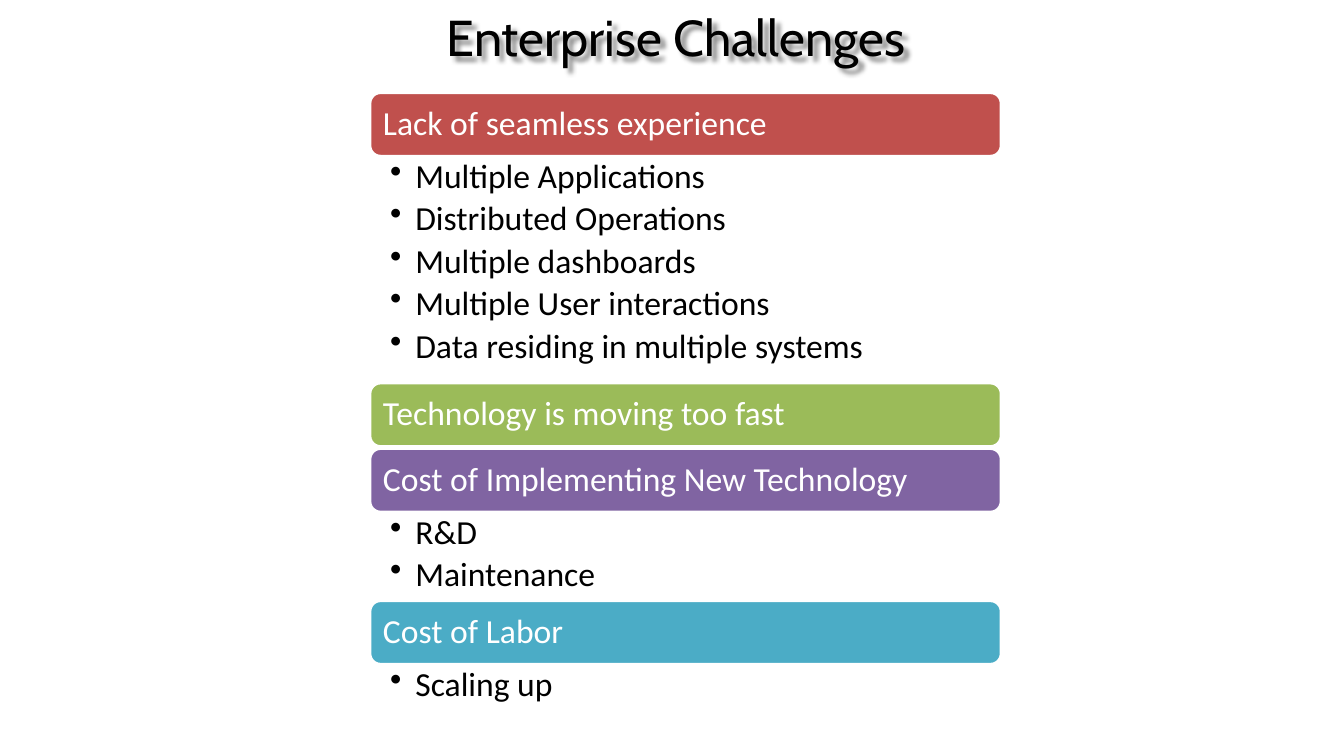
from lxml import etree
from pptx import Presentation
from pptx.dml.color import RGBColor
from pptx.enum import shapes, text
from pptx.oxml import parse_xml
from pptx.oxml.ns import nsdecls, qn
from pptx.util import Inches, Pt

SLIDE_WIDTH, SLIDE_HEIGHT = Inches(13.33), Inches(7.5)
COLORS = {
    "black": "000000",
    "white": "FFFFFF",
    "red": "C0504D",
    "green": "9BBB59",
    "purple": "8064A2",
    "teal": "4BACC6",
}
COLUMN_LEFT, COLUMN_WIDTH = 27.53, 46.96
FIRST_TOP, HEADING_HEIGHT, HEADING_GAP = 12.27, 8.4, 0.27
CHALLENGES = [
    ("Lack of seamless experience", "red", 30, [
        "Multiple Applications",
        "Distributed Operations",
        "Multiple dashboards",
        "Multiple User interactions",
        "Data residing in multiple systems",
    ]),
    ("Technology is moving too fast", "green", HEADING_GAP, []),
    ("Cost of Implementing New Technology", "purple", 11.73, ["R&D", "Maintenance"]),
    ("Cost of Labor", "teal", 5.87, ["Scaling up"]),
]


def rgb(name):
    """Return the named palette colour."""
    return RGBColor.from_string(COLORS[name])


def area(left, top, width, height):
    """Turn percentages of the slide's size into lengths."""
    return (int(SLIDE_WIDTH * left / 100), int(SLIDE_HEIGHT * top / 100),
            int(SLIDE_WIDTH * width / 100), int(SLIDE_HEIGHT * height / 100))


def set_insets(frame, left, top, right, bottom):
    """Set the margins of a text frame in inches."""
    frame.margin_left, frame.margin_top = Inches(left), Inches(top)
    frame.margin_right, frame.margin_bottom = Inches(right), Inches(bottom)


def write(paragraph, words, size, font, color):
    """Add one formatted run to a paragraph."""
    run = paragraph.add_run()
    run.text = words
    run.font.size, run.font.name = Pt(size), font
    run.font.color.rgb = rgb(color)


def add_title(slide, words):
    """Place the title with a soft shadow behind its letters."""
    title = slide.shapes.title
    title.left, title.top, title.width, title.height = area(23.11, 0.13, 54.39, 9.47)
    title.text_frame.vertical_anchor = text.MSO_ANCHOR.TOP
    title.text_frame.auto_size = text.MSO_AUTO_SIZE.SHAPE_TO_FIT_TEXT
    paragraph = title.text_frame.paragraphs[0]
    paragraph.alignment = text.PP_ALIGN.CENTER
    write(paragraph, words, 36, "Cabin", "black")
    title.fill.background()
    title._element.spPr.append(parse_xml(
        f'<a:effectLst {nsdecls("a")}>'
        '<a:outerShdw blurRad="38100" dist="50800" dir="2700000" algn="tl" rotWithShape="0">'
        f'<a:srgbClr val="{COLORS["black"]}"><a:alpha val="45000"/></a:srgbClr>'
        '</a:outerShdw></a:effectLst>'))


def add_heading(slide, top, words, color):
    """Add one coloured bar naming a challenge."""
    heading = slide.shapes.add_shape(
        shapes.MSO_SHAPE.ROUNDED_RECTANGLE,
        *area(COLUMN_LEFT, top, COLUMN_WIDTH, HEADING_HEIGHT))
    heading.shadow.inherit = False
    heading.fill.solid()
    heading.fill.fore_color.rgb = rgb(color)
    heading.line.color.rgb = rgb("white")
    heading.line.width = Pt(2)
    frame = heading.text_frame
    frame.word_wrap = True
    frame.vertical_anchor = text.MSO_ANCHOR.MIDDLE
    set_insets(frame, 0.1, 0.1, 0.1, 0.1)
    paragraph = frame.paragraphs[0]
    paragraph.alignment = text.PP_ALIGN.LEFT
    paragraph.line_spacing = 0.9
    write(paragraph, words, 24, "Calibri", "white")


def add_points(slide, top, height, points):
    """Add the bulleted points below a heading."""
    box = slide.shapes.add_textbox(*area(COLUMN_LEFT, top, COLUMN_WIDTH, height))
    frame = box.text_frame
    frame.word_wrap = True
    set_insets(frame, 0.2, 0.03, 0.19, 0.03)
    for index, point in enumerate(points):
        paragraph = frame.paragraphs[0] if index == 0 else frame.add_paragraph()
        paragraph.level = 1
        paragraph.line_spacing = 0.9
        paragraph.space_after = Pt(4.4)
        properties = paragraph._p.get_or_add_pPr()
        properties.set("marL", str(Inches(0.25)))
        properties.set("indent", str(Inches(-0.25)))
        etree.SubElement(properties, qn("a:buChar")).set("char", "•")
        write(paragraph, point, 24, "Calibri", "black")


def main():
    """Build the slide and save it."""
    deck = Presentation()
    deck.slide_width, deck.slide_height = SLIDE_WIDTH, SLIDE_HEIGHT
    slide = deck.slides.add_slide(deck.slide_layouts[5])
    add_title(slide, "Enterprise Challenges")
    top = FIRST_TOP
    for heading, color, height, points in CHALLENGES:
        add_heading(slide, top, heading, color)
        top += HEADING_HEIGHT
        if points:
            add_points(slide, top, height, points)
        top += height
    deck.save("out.pptx")


if __name__ == "__main__":
    main()
